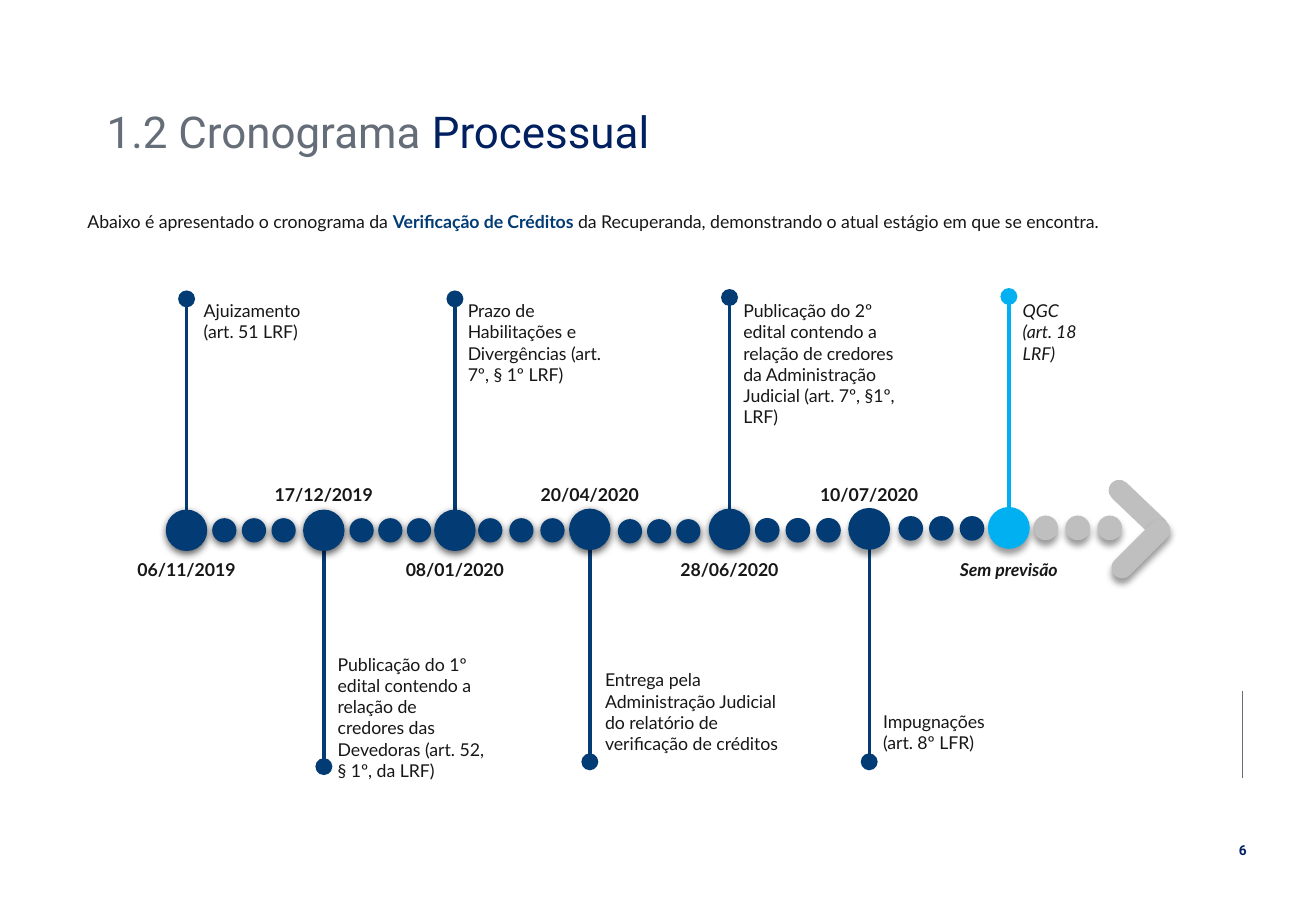
import pptx
import pptx.util
import pptx.dml.color
import pptx.enum.shapes
import pptx.enum.text
import pptx.oxml.ns
from lxml import etree

Cm, Pt, qn = pptx.util.Cm, pptx.util.Pt, pptx.oxml.ns.qn
RGBColor = pptx.dml.color.RGBColor
SHAPE = pptx.enum.shapes.MSO_SHAPE
ALIGN = pptx.enum.text.PP_ALIGN

NAVY = RGBColor(0x03, 0x3C, 0x75)
DEEP_BLUE = RGBColor(0x00, 0x20, 0x60)
SKY = RGBColor(0x00, 0xB0, 0xF0)
SILVER = RGBColor(0xBF, 0xBF, 0xBF)
SLATE = RGBColor(0x65, 0x6D, 0x78)
INK = RGBColor(0x18, 0x17, 0x17)

# Shadow styles: opacity in percent, blur and distance in points
STRONG = (63, 4.5, 1.5)
SOFT = (40, 4, 3)

deck = pptx.Presentation()
deck.slide_width, deck.slide_height = Cm(27.51), Cm(19.05)
page = deck.slides.add_slide(deck.slide_layouts[6])


def add_text(left, top, width, height, paras, size=10.5, font="Lato", align=ALIGN.LEFT):
    """Add a text box; each paragraph is a list of (text, colour, bold, italic)."""
    box = page.shapes.add_textbox(Cm(left), Cm(top), Cm(width), Cm(height))
    frame = box.text_frame
    frame.word_wrap = True
    for number, spans in enumerate(paras):
        para = frame.add_paragraph() if number else frame.paragraphs[0]
        para.alignment = align
        for text, color, bold, italic in spans:
            span = para.add_run()
            span.text = text
            span.font.name, span.font.size = font, Pt(size)
            span.font.bold, span.font.italic = bold, italic
            span.font.color.rgb = color
    return frame.paragraphs[0]


def add_solid(kind, center_x, center_y, width, height, color, shadow):
    """Add a one-colour shape around its centre, with a shadow cast downwards."""
    shape = page.shapes.add_shape(kind, Cm(center_x - width / 2), Cm(center_y - height / 2),
                                  Cm(width), Cm(height))
    shape.fill.solid()
    shape.fill.fore_color.rgb = color
    shape.line.color.rgb = color
    shape.line.width = Pt(1 if shadow != STRONG else 0.75)
    shape.shadow.inherit = False
    if shadow:
        opacity, blur, distance = shadow
        effects = shape._element.spPr.find(qn("a:effectLst"))
        outer = etree.SubElement(effects, qn("a:outerShdw"), blurRad=str(Pt(blur)),
                                 dist=str(Pt(distance)), dir="5400000", rotWithShape="0")
        black = etree.SubElement(outer, qn("a:srgbClr"), val="000000")
        etree.SubElement(black, qn("a:alpha"), val=str(opacity * 1000))
    return shape


# Heading, introduction and page number
heading = add_text(1.98, 2.18, 20.78, 1.35,
                   [[("1.2 Cronograma ", SLATE, False, False),
                     ("Processual", DEEP_BLUE, False, False)]], 26, "Roboto")
heading.line_spacing = 0.9
intro = add_text(0.79, 4.22, 25.83, 0.76, [[
    ("Abaixo é apresentado o cronograma da ", INK, False, False),
    ("Verificação de Créditos ", NAVY, True, False),
    ("da Recuperanda, demonstrando o atual estágio em que se encontra.", INK, False, False),
]], align=ALIGN.JUSTIFY)
intro.line_spacing = 1.14
intro._p.get_or_add_pPr().set("indent", str(Cm(0.79)))
add_text(25.55, 17.48, 0.86, 0.61, [[("6", DEEP_BLUE, True, False)]], 8.1, "Roboto", ALIGN.CENTER)

# Milestones: centre x, centre y, pin end y, date,
# then description left, top, width, height and paragraphs
milestones = [
    (3.9, 11.09, 6.25, "06/11/2019", 4.01, 6.15, 2.84, 1.19, ["Ajuizamento (art. 51 LRF)"]),
    (6.77, 11.09, 16.03, "17/12/2019", 6.81, 13.54, 3.63, 2.49,
     ["Publicação do 1º edital contendo a relação de credores das Devedoras "
      "(art. 52, § 1º, da LRF)"]),
    (9.51, 11.09, 6.25, "08/01/2020", 9.53, 6.15, 3.3, 2.06,
     ["Prazo de Habilitações e Divergências (art. 7º, § 1º LRF)"]),
    (12.33, 11.07, 15.93, "20/04/2020", 12.4, 13.87, 4.52, 2.06,
     ["Entrega pela Administração Judicial do relatório de verificação de créditos"]),
    (15.25, 11.07, 6.22, "28/06/2020", 15.29, 6.15, 3.99, 2.49,
     ["Publicação do 2º edital contendo a relação de credores da Administração Judicial "
      "(art. 7º, §1º, LRF)"]),
    (18.17, 11.06, 15.93, "10/07/2020", 18.21, 14.73, 3.15, 1.19, ["Impugnações (art. 8º LFR)"]),
    (21.09, 11.04, 6.2, "Sem previsão", 21.13, 6.15, 2.29, 1.14, ["QGC", "(art. 18 LRF)"]),
]
# Three dots after each milestone: first centre x, centre y, step
dot_groups = [(4.69, 11.09, 0.62), (7.56, 11.09, 0.6), (10.25, 11.09, 0.65), (13.17, 11.11, 0.61),
              (16.04, 11.09, 0.64), (19.04, 11.05, 0.64), (21.86, 11.04, 0.67)]
last = len(milestones) - 1

# Pins, and the thin rule at the right margin
lines = [(25.98, 14.45, 16.26, SLATE, 0.5)]
for index, (x, y, pin_y, *_) in enumerate(milestones):
    lines.append((x, pin_y, y, SKY if index == last else NAVY, 2))
for x, start_y, end_y, color, weight in lines:
    line = page.shapes.add_connector(pptx.enum.shapes.MSO_CONNECTOR.STRAIGHT,
                                     Cm(x), Cm(start_y), Cm(x), Cm(end_y))
    line.line.color.rgb = color
    line.line.width = Pt(weight)
    properties = line._element.spPr
    if weight == 2:
        etree.SubElement(properties.find(qn("a:ln")), qn("a:headEnd"),
                         type="oval", w="lg", len="lg")
    etree.SubElement(properties, qn("a:effectLst"))

# Dots, milestone discs, dates and descriptions
for index, (milestone, dots) in enumerate(zip(milestones, dot_groups)):
    first_x, dot_y, step = dots
    for number in range(3):
        add_solid(SHAPE.OVAL, first_x + number * step, dot_y, 0.48, 0.48,
                  SILVER if index == last else NAVY, STRONG if index < 4 else SOFT)

    x, y, pin_y, date, left, top, width, height, description = milestone
    is_last = index == last
    add_solid(SHAPE.OVAL, x, y, 0.84, 0.84, SKY if is_last else NAVY,
              STRONG if index < 5 else SOFT)
    date_top = 11.56 if pin_y < y else 9.99
    add_text(x - 1.4, date_top, 2.8, 0.74, [[(date, INK, True, is_last)]], align=ALIGN.CENTER)
    add_text(left, top, width, height, [[(text, INK, False, is_last)] for text in description])

# Arrowhead closing the timeline
for x, y, angle, shadow in [(23.8, 10.64, 43.7, None), (23.85, 11.48, 315, SOFT)]:
    bar = add_solid(SHAPE.ROUNDED_RECTANGLE, x, y, 1.52, 0.41, SILVER, shadow)
    bar.adjustments[0] = 0.5
    bar.rotation = angle

deck.save("out.pptx")
